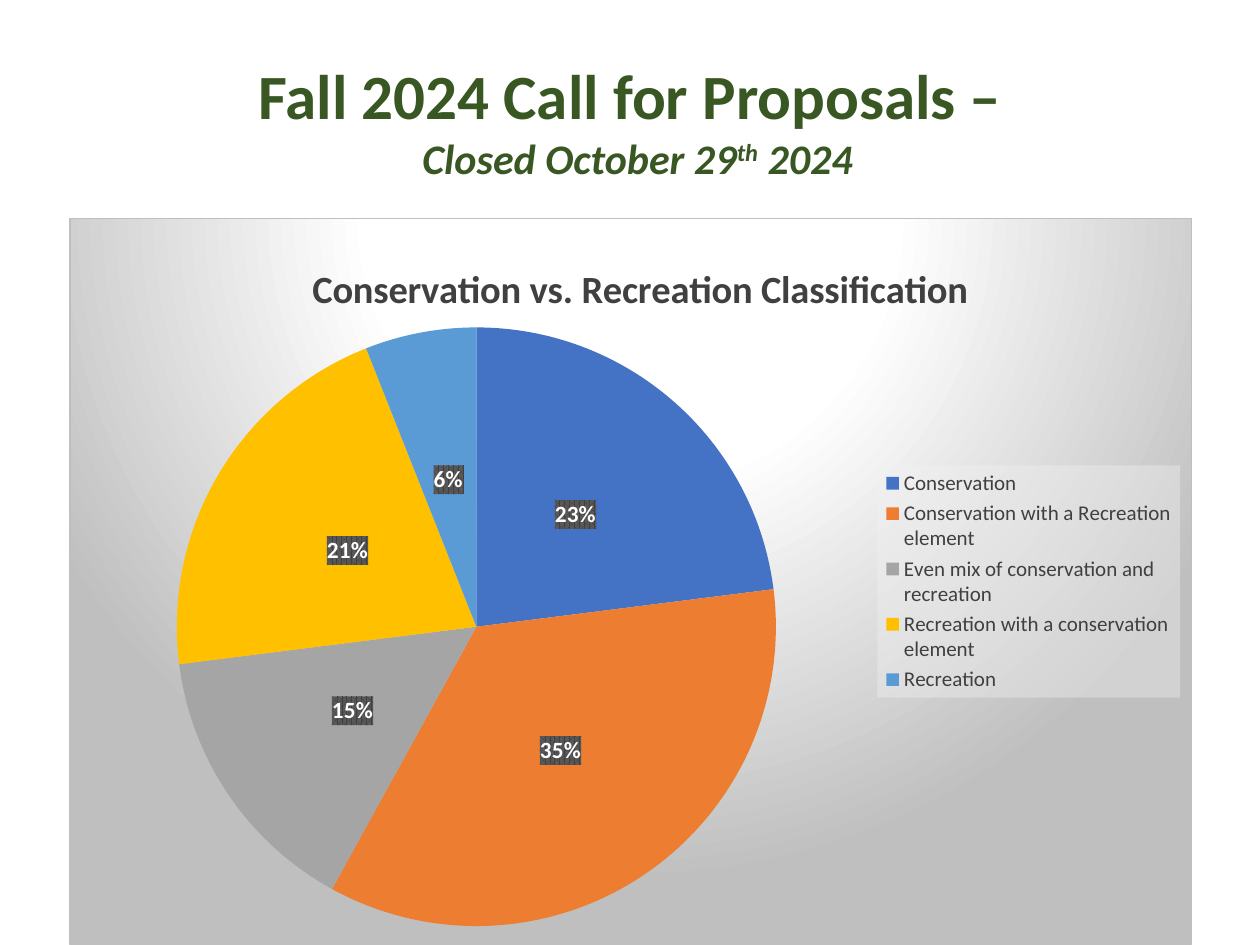
from lxml import etree
from pptx import Presentation
from pptx.chart.data import CategoryChartData
from pptx.dml.color import RGBColor
from pptx.enum import chart as ch, text
from pptx.oxml import parse_xml
from pptx.oxml.ns import nsdecls, qn
from pptx.util import Inches, Pt

FONT = "Calibri"
GREEN = RGBColor(0x38, 0x57, 0x23)
DARK = RGBColor(0x40, 0x40, 0x40)
WHITE = RGBColor(0xFF, 0xFF, 0xFF)
BLACK = RGBColor(0, 0, 0)

# Content
HEADING = "Fall 2024 Call for Proposals – "
CLOSING = [("Closed October 29", 0), ("th", 30), (" 2024", 0)]  # text, raised %
CHART_TITLE = "Conservation vs. Recreation Classification"
SLICES = [
    ("Conservation", 23, RGBColor(0x44, 0x72, 0xC4)),
    ("Conservation with a Recreation element", 35, RGBColor(0xED, 0x7D, 0x31)),
    ("Even mix of conservation and recreation", 15, RGBColor(0xA5, 0xA5, 0xA5)),
    ("Recreation with a conservation element", 21, RGBColor(0xFF, 0xC0, 0x00)),
    ("Recreation", 6, RGBColor(0x5B, 0x9B, 0xD5)),
]

# Fills inside the chart
BACKDROP = """<a:gradFill><a:gsLst>
<a:gs pos="0"><a:srgbClr val="FFFFFF"/></a:gs>
<a:gs pos="39000"><a:srgbClr val="FFFFFF"/></a:gs>
<a:gs pos="100000"><a:srgbClr val="BFBFBF"/></a:gs></a:gsLst>
<a:path path="circle"><a:fillToRect l="50000" t="-80000" r="50000" b="180000"/></a:path>
</a:gradFill><a:ln w="9525"><a:solidFill><a:srgbClr val="BFBFBF"/></a:solidFill></a:ln>"""
LEGEND_FILL = """<a:solidFill><a:srgbClr val="F2F2F2"><a:alpha val="39000"/></a:srgbClr>
</a:solidFill>"""
LABEL_FILL = """<a:pattFill prst="pct75"><a:fgClr><a:srgbClr val="404040"/></a:fgClr>
<a:bgClr><a:srgbClr val="595959"/></a:bgClr></a:pattFill>"""


def set_font(font, size, color, bold=False):
    font.name, font.size, font.bold = FONT, Pt(size), bold
    font.color.rgb = color


def set_fill(part, fill):
    """Give a chart part its fill, just ahead of its text properties."""
    part.find(qn("c:txPr")).addprevious(
        parse_xml(f"<c:spPr {nsdecls('c', 'a')}>{fill}</c:spPr>"))


def set_layout(part, index, inner=False, **shares):
    """Place a chart part by shares of the chart's size."""
    for old in part.findall(qn("c:layout")):
        part.remove(old)
    layout = etree.Element(qn("c:layout"))
    manual = etree.SubElement(layout, qn("c:manualLayout"))
    settings = [("layoutTarget", "inner")] if inner else []
    settings += [(k + "Mode", "edge") for k in "xy"] + list(shares.items())
    for name, value in settings:
        etree.SubElement(manual, qn("c:" + name)).set("val", str(value))
    part.insert(index, layout)


prs = Presentation()
prs.slide_width, prs.slide_height = Inches(10), Inches(7.5)
s = prs.slides.add_slide(prs.slide_layouts[6])

# Heading
tf = s.shapes.add_textbox(Inches(0.42), Inches(0.4), Inches(9.28), Inches(1.11)).text_frame
tf.word_wrap = True
tf.auto_size = text.MSO_AUTO_SIZE.SHAPE_TO_FIT_TEXT
for runs, size, italic in [([(HEADING, 0)], 36, False), (CLOSING, 24, True)]:
    p = tf.paragraphs[0] if size == 36 else tf.add_paragraph()
    p.alignment = text.PP_ALIGN.CENTER
    set_font(p.font, size, GREEN, True)
    p.font.italic = italic
    for words, raised in runs:
        r = p.add_run()
        r.text = words
        if raised:
            r.font._element.set("baseline", str(raised * 1000))

# Pie chart
names, values, colors = zip(*SLICES)
data = CategoryChartData()
data.categories = names
data.add_series("Series 1", values)
chart = s.shapes.add_chart(ch.XL_CHART_TYPE.PIE, Inches(0.55), Inches(1.73),
                           Inches(8.91), Inches(5.77), data).chart
set_font(chart.font, 10, BLACK)
set_fill(chart._chartSpace, BACKDROP)

plot = chart.plots[0]
plot.vary_by_categories = True
for i, color in enumerate(colors):
    fill = plot.series[0].points[i].format.fill
    fill.solid()
    fill.fore_color.rgb = color
set_layout(chart._chartSpace.chart.plotArea, 0, inner=True, x=0.095, y=0.15, w=0.535, h=0.825)

# Chart title
chart.has_title = True
p = chart.chart_title.text_frame.paragraphs[0]
p.text = CHART_TITLE
set_font(p.font, 22, DARK, True)
set_layout(chart.chart_title._element, 1, x=0.21, y=0.05)

# Percent labels
labels = plot.series[0].data_labels
labels.show_percentage, labels.show_value = True, False
labels.number_format, labels.number_format_is_linked = "0%", False
labels.position = ch.XL_LABEL_POSITION.CENTER
set_font(labels.font, 13.3, WHITE, True)
set_fill(labels._element, LABEL_FILL)

# Legend
chart.has_legend = True
legend = chart.legend
legend.position = ch.XL_LEGEND_POSITION.RIGHT
legend.include_in_layout = False
set_font(legend.font, 12, DARK)
set_fill(legend._element, LEGEND_FILL)
set_layout(legend._element, 1, x=0.72, y=0.34, w=0.27, h=0.32)

prs.save("out.pptx")
